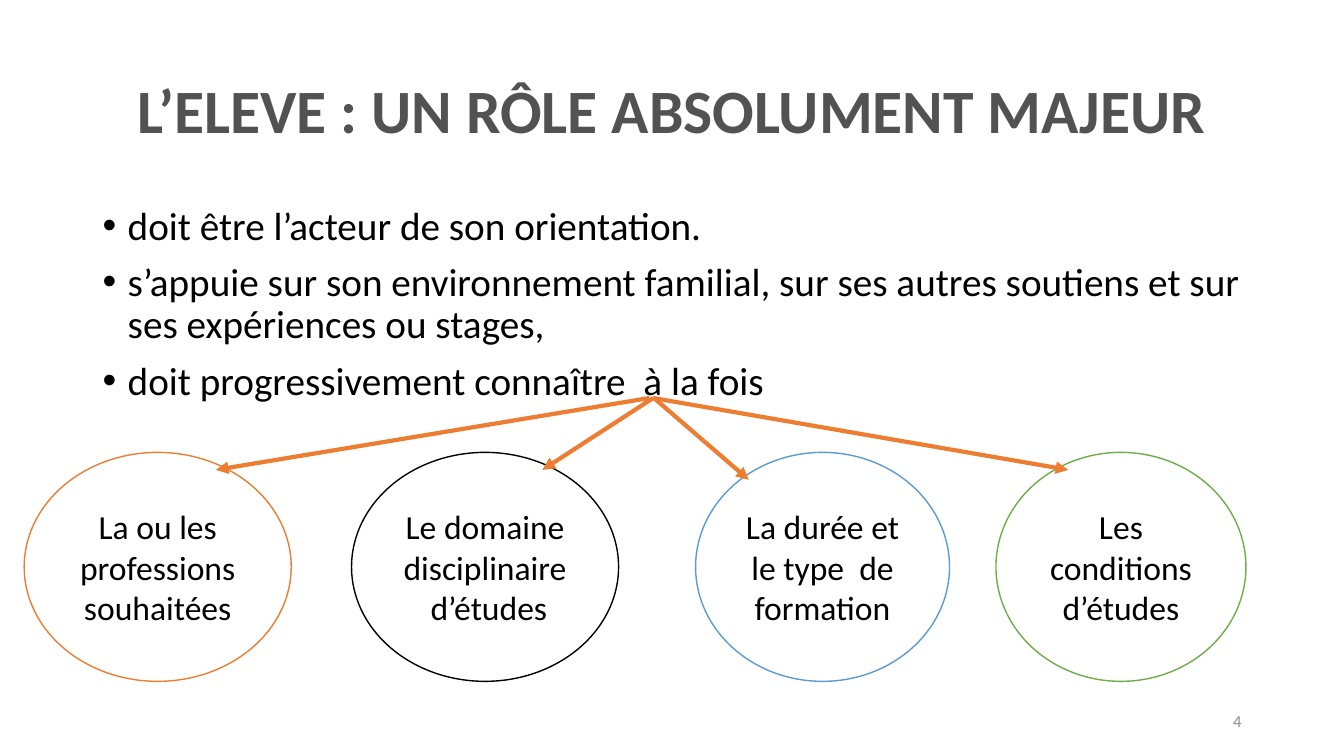
from pptx import Presentation
from pptx import util as u
from pptx.dml import color
from pptx.enum import shapes, text
from pptx.oxml import parse_xml
from pptx.oxml.ns import nsdecls

ORANGE = "ED7D31"
BLACK = "000000"
ROLES = [
    "doit être l’acteur de son orientation.",
    "s’appuie sur son environnement familial, sur ses autres soutiens et sur ses expériences ou stages,",
    "doit progressivement connaître  à la fois",
]
# Each topic: label, outline, left, width, arrow start x, arrow tip offset (x, y)
TOPICS = [
    ("La ou les professions souhaitées", ORANGE, 0.61, 6.73, 16.36, (4.83, 0.44)),
    ("Le domaine disciplinaire  d’études", BLACK, 8.86, 6.73, 16.46, (4.81, 0.44)),
    ("La durée et le type  de formation", "5B9BD5", 17.53, 6.4, 16.48, (1.34, 0.69)),
    ("Les conditions d’études", "70AD47", 25.1, 6.3, 16.46, (1.82, 0.44)),
]


def rgb(value):
    """Turn a hex string into a colour."""
    return color.RGBColor.from_string(value)


def place(shape, left, top, width, height):
    """Put a shape in a box given in centimetres."""
    shape.left, shape.top = u.Cm(left), u.Cm(top)
    shape.width, shape.height = u.Cm(width), u.Cm(height)


def format_paragraph(paragraph, size, colour, alignment, bold=False):
    """Align a paragraph and format its runs."""
    paragraph.alignment = alignment
    for run in paragraph.runs:
        run.font.name = "Calibri"
        run.font.size = u.Pt(size)
        run.font.bold = bold
        run.font.color.rgb = rgb(colour)


def fill_title(title, box):
    """Write the heading in the title placeholder."""
    place(title, *box)
    frame = title.text_frame
    frame.text = "L’ELEVE : UN RÔLE ABSOLUMENT MAJEUR"
    frame.auto_size = text.MSO_AUTO_SIZE.NONE
    frame.vertical_anchor = text.MSO_ANCHOR.MIDDLE
    frame.paragraphs[0].line_spacing = 0.9
    format_paragraph(frame.paragraphs[0], 44, "525252", text.PP_ALIGN.CENTER, True)


def fill_roles(body, box):
    """Write the bulleted roles in the body placeholder."""
    place(body, *box)
    frame = body.text_frame
    frame.text = "\n".join(ROLES)
    frame.auto_size = text.MSO_AUTO_SIZE.NONE
    for paragraph in frame.paragraphs:
        paragraph.line_spacing = 0.9
        paragraph.space_before = u.Pt(10)
        properties = paragraph._p.get_or_add_pPr()
        properties.set("marL", str(u.Cm(0.635)))
        properties.set("indent", str(-u.Cm(0.635)))
        format_paragraph(paragraph, 28, BLACK, text.PP_ALIGN.LEFT)


def add_page_number(slide, box):
    """Add the page number at the right of its box."""
    frame = slide.shapes.add_textbox(*map(u.Cm, box)).text_frame
    frame.word_wrap = True
    frame.vertical_anchor = text.MSO_ANCHOR.MIDDLE
    frame.text = "4"
    format_paragraph(frame.paragraphs[0], 12, "8C8C8C", text.PP_ALIGN.RIGHT)


def add_topic(slide, label, outline, box):
    """Add one outlined ellipse with its label."""
    shape = slide.shapes.add_shape(shapes.MSO_SHAPE.OVAL, *map(u.Cm, box))
    shape.shadow.inherit = False
    shape.fill.solid()
    shape.fill.fore_color.rgb = rgb("FFFFFF")
    shape.line.color.rgb = rgb(outline)
    shape.line.width = u.Pt(1)
    shape.text_frame.text = label
    format_paragraph(shape.text_frame.paragraphs[0], 24, BLACK, text.PP_ALIGN.CENTER)


def add_arrow(slide, start, end):
    """Add an orange arrow between two points."""
    arrow = slide.shapes.add_connector(
        shapes.MSO_CONNECTOR.STRAIGHT, *map(u.Cm, (*start, *end))
    )
    arrow.line.color.rgb = rgb(ORANGE)
    arrow.line.width = u.Pt(3)
    arrow.line._get_or_add_ln().append(
        parse_xml(f'<a:tailEnd {nsdecls("a")} type="triangle"/>')
    )
    arrow._element.spPr.append(parse_xml(f'<a:effectLst {nsdecls("a")}/>'))


def add_topics(slide, top, height, source_y):
    """Add the row of topics and the arrows that fan out to them."""
    for label, outline, left, width, _, _ in TOPICS:
        add_topic(slide, label, outline, (left, top, width, height))
    for _, _, left, _, source_x, (tip_x, tip_y) in TOPICS:
        add_arrow(slide, (source_x, source_y), (left + tip_x, top + tip_y))


def main():
    """Build the slide and save it."""
    presentation = Presentation()
    presentation.slide_width, presentation.slide_height = u.Cm(33.87), u.Cm(19.05)
    slide = presentation.slides.add_slide(presentation.slide_layouts[1])
    fill_title(slide.shapes.title, (2.33, 1.01, 29.21, 3.68))
    fill_roles(slide.placeholders[1], (2.33, 5.07, 29.21, 12.09))
    add_page_number(slide, (23.92, 17.66, 7.62, 1.01))
    add_topics(slide, 11.4, 5.77, 10.03)
    presentation.save("out.pptx")


if __name__ == "__main__":
    main()
